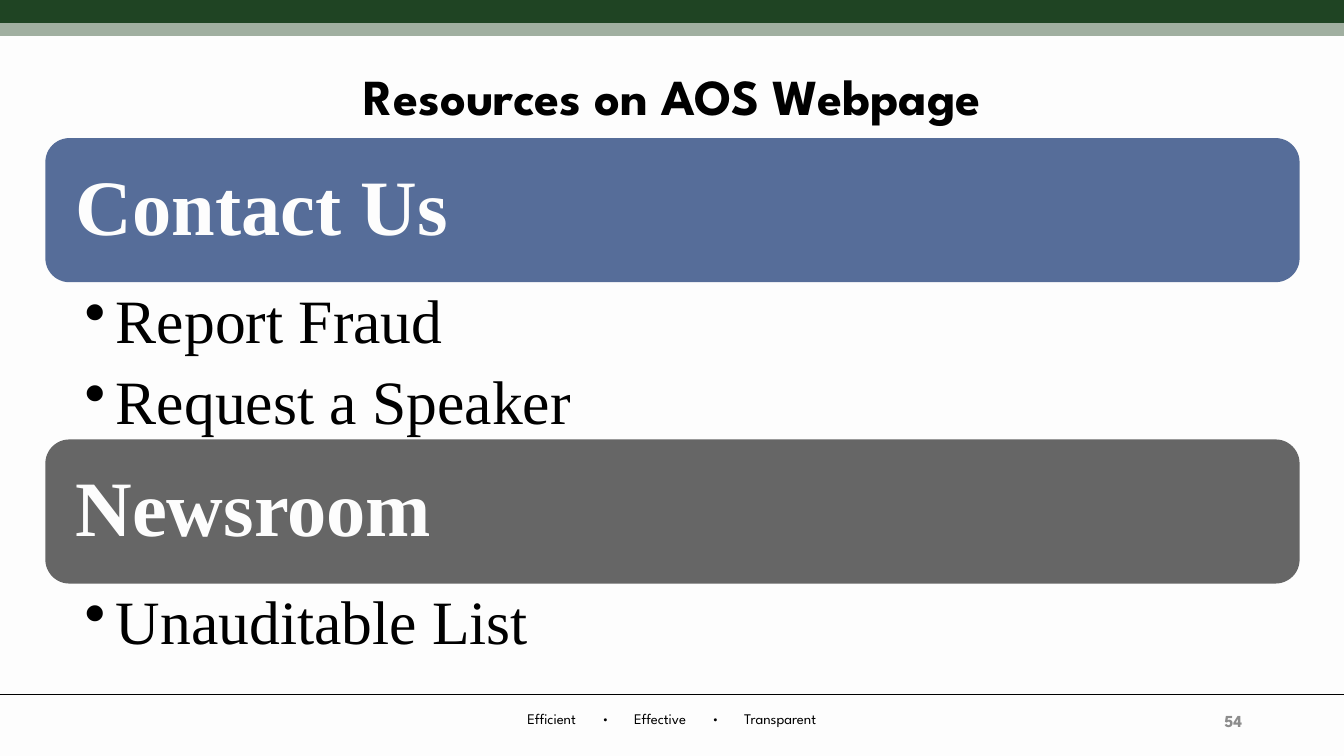
import pptx
import pptx.util
import pptx.dml.color
import pptx.enum.shapes
import pptx.enum.text
import pptx.oxml
import pptx.oxml.ns
from dataclasses import dataclass

Inches = pptx.util.Inches
Pt = pptx.util.Pt
ALIGN = pptx.enum.text.PP_ALIGN
ANCHOR = pptx.enum.text.MSO_ANCHOR


@dataclass
class Theme:
    paper: str = "FDFDFD"
    ink: str = "000000"
    green: str = "1F4423"
    sage: str = "A0AFA0"
    blue: str = "566D99"
    gray: str = "666666"
    pale: str = "8C8C8C"
    sans: str = "League Spartan"
    serif: str = "Times New Roman"
    title: float = 36
    head: float = 56
    item: float = 44
    page: float = 12
    foot: float = 10.5


def color(code):
    return pptx.dml.color.RGBColor.from_string(code)


def add_xml(parent, tag, **attrs):
    node = pptx.oxml.ns.qn(tag)
    child = parent.makeelement(node, attrs)
    parent.append(child)
    return child


class Deck:
    def __init__(self, theme):
        self.theme = theme
        self.file = pptx.Presentation()
        self.file.slide_width = Inches(13.33)
        self.file.slide_height = Inches(7.5)
        self.slide = self.file.slides.add_slide(self.file.slide_layouts[6])
        fill = self.slide.background.fill
        fill.solid()
        fill.fore_color.rgb = color(theme.paper)

    def rule(self, y, tint, width):
        """Draw a line across the slide."""
        line = self.slide.shapes.add_connector(
            pptx.enum.shapes.MSO_CONNECTOR.STRAIGHT,
            Inches(0), Inches(y), Inches(13.33), Inches(y))
        line.line.color.rgb = color(tint)
        line.line.width = Pt(width)
        add_xml(line._element.spPr, "a:effectLst")

    def frame(self, shape, inset, anchor):
        """Set wrap, insets (left, top, right, bottom) and anchor."""
        frame = shape.text_frame
        frame.word_wrap = True
        frame.vertical_anchor = anchor
        (frame.margin_left, frame.margin_top,
         frame.margin_right, frame.margin_bottom) = map(Inches, inset)
        return frame

    def style(self, para, face, size, tint, bold=False):
        for run in para.runs:
            run.font.name = face
            run.font.size = Pt(size)
            run.font.bold = bold
            run.font.color.rgb = color(tint)

    def text(self, box, words, size, tint, align=ALIGN.LEFT, bold=False,
             inset=(0.1, 0.05, 0.1, 0.05), anchor=ANCHOR.MIDDLE, tabs=()):
        """Add a one-line text box, with tab stops if given."""
        shape = self.slide.shapes.add_textbox(*map(Inches, box))
        frame = self.frame(shape, inset, anchor)
        frame.text = words
        para = frame.paragraphs[0]
        para.alignment = align
        if tabs:
            stops = add_xml(para._p.get_or_add_pPr(), "a:tabLst")
            for stop in tabs:
                add_xml(stops, "a:tab", pos=str(Inches(stop)), algn="l")
        self.style(para, self.theme.sans, size, tint, bold)

    def banner(self, top, words, tint):
        """Add a rounded bar with its heading."""
        shape = self.slide.shapes.add_shape(
            pptx.enum.shapes.MSO_SHAPE.ROUNDED_RECTANGLE,
            Inches(0.45), Inches(top), Inches(12.44), Inches(1.43))
        shape.shadow.inherit = False
        shape.fill.solid()
        shape.fill.fore_color.rgb = color(tint)
        shape.line.fill.background()
        frame = self.frame(shape, [0.23] * 4, ANCHOR.MIDDLE)
        frame.text = words
        para = frame.paragraphs[0]
        para.alignment = ALIGN.LEFT
        para.line_spacing = 0.9
        self.style(para, self.theme.serif, self.theme.head,
                   self.theme.paper, True)

    def bullets(self, top, height, items):
        """Add a bulleted list below a bar."""
        shape = self.slide.shapes.add_textbox(
            Inches(0.45), Inches(top), Inches(12.44), Inches(height))
        frame = self.frame(shape, (0.39, 0.08, 0.44, 0.08), ANCHOR.TOP)
        frame.text = "\n".join(items)
        for para in frame.paragraphs:
            props = para._p.get_or_add_pPr()
            props.set("marL", str(Inches(0.31)))
            props.set("indent", str(-Inches(0.31)))
            add_xml(props, "a:buChar", char="•")
            para.level = 1
            para.line_spacing = 0.9
            para.space_after = Pt(10.6)
            self.style(para, self.theme.serif, self.theme.item,
                       self.theme.ink)


def main():
    theme = Theme()
    deck = Deck(theme)

    # Top bands and footer rule
    deck.rule(0.1, theme.green, 18)
    deck.rule(0.29, theme.sage, 9)
    deck.rule(6.89, theme.ink, 0.5)

    # Footer motto and page number
    deck.text((0, 6.99, 13.33, 0.28), "Efficient\t•\tEffective\t•\tTransparent",
              theme.foot, theme.ink, inset=(5.23, 0.05, 0.1, 0.05),
              anchor=ANCHOR.TOP, tabs=(0.74, 1.06, 1.83, 2.15))
    deck.text((9.42, 6.95, 3, 0.4), "54", theme.page, theme.pale,
              ALIGN.RIGHT, True)

    # Title
    deck.text((0.92, 0.4, 11.5, 1.1), "Resources on AOS Webpage",
              theme.title, theme.ink, ALIGN.CENTER, True)

    # Sections
    sections = [
        (1.37, "Contact Us", theme.blue, 1.55,
         ["Report Fraud", "Request a Speaker"]),
        (4.36, "Newsroom", theme.gray, 1.01, ["Unauditable List"]),
    ]
    for top, head, tint, height, items in sections:
        deck.banner(top, head, tint)
        deck.bullets(top + 1.43, height, items)

    deck.file.save("out.pptx")


if __name__ == "__main__":
    main()
